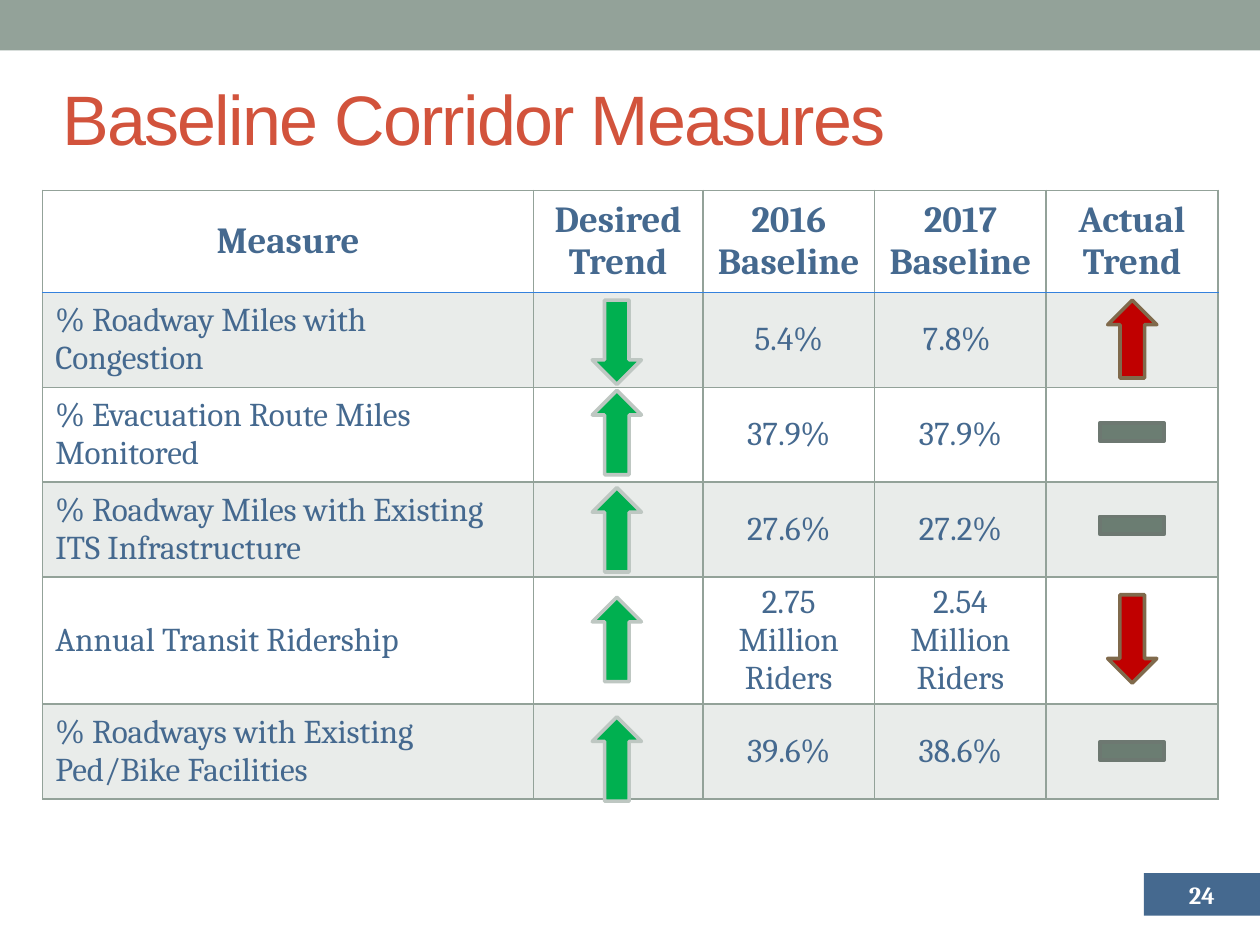
"""Build the slide of baseline corridor measures with trend arrows."""
from lxml.etree import SubElement
from pptx import Presentation
from pptx.dml.color import RGBColor
from pptx.enum.shapes import MSO_SHAPE as SHAPE
from pptx.enum.text import MSO_ANCHOR as ANCHOR, PP_ALIGN as ALIGN
from pptx.oxml import parse_xml
from pptx.oxml.ns import nsdecls, qn
from pptx.util import Cm, Pt

SAGE = RGBColor(0x93, 0xA2, 0x99)
NAVY = RGBColor(0x45, 0x69, 0x8F)
BLUE = RGBColor(0x34, 0x81, 0xDD)
BRICK = RGBColor(0xD2, 0x53, 0x3C)
WHITE = RGBColor(0xFF, 0xFF, 0xFF)
GREEN = RGBColor(0x00, 0xB0, 0x50)
GREEN_EDGE = RGBColor(0xBE, 0xC7, 0xC2)
RED = RGBColor(0xC0, 0x00, 0x00)
RED_EDGE = RGBColor(0x80, 0x6A, 0x4C)
DASH = RGBColor(0x6B, 0x7D, 0x72)
DASH_EDGE = RGBColor(0x6D, 0x78, 0x71)

ROWS = [
    ("Measure", "Desired Trend", "2016 Baseline", "2017\nBaseline", "Actual Trend"),
    ("% Roadway Miles with Congestion", "", "5.4%", "7.8% ", ""),
    ("% Evacuation Route Miles Monitored", "", "37.9%", "37.9%", ""),
    ("% Roadway Miles with Existing ITS Infrastructure", "", "27.6%", "27.2%", ""),
    ("Annual Transit Ridership", "", "2.75 Million Riders", "2.54 Million Riders", ""),
    ("% Roadways with Existing Ped/Bike Facilities", "", "39.6%", "38.6%", ""),
]
COL_WIDTHS = [9.89, 3.42, 3.46, 3.46, 3.46]
ROW_HEIGHTS = [2.06, 1.91, 1.91, 1.91, 2.55, 1.91]


class Deck:
    """Hold the style and the current slide."""

    font = "Cambria"

    def __init__(self, prs):
        self.s = prs.slides.add_slide(prs.slide_layouts[5])

    def style(self, p, size, color, bold=False, align=None, font=None):
        p.font.name, p.font.size, p.font.bold = font or self.font, Pt(size), bold
        p.font.color.rgb = color
        p.alignment = align

    def title(self, text, x, y, w, h):
        sp = self.s.shapes.title
        sp.left, sp.top, sp.width, sp.height = Cm(x), Cm(y), Cm(w), Cm(h)
        tf = sp.text_frame
        tf.text, tf.vertical_anchor, tf.word_wrap = text, ANCHOR.MIDDLE, True
        p = tf.paragraphs[0]
        self.style(p, 40, BRICK, align=ALIGN.LEFT, font="Arial")
        p.runs[0].font._element.set("spc", "-100")

    def shape(self, kind, x, y, w, h, fill, edge=None, rotation=0):
        sp = self.s.shapes.add_shape(kind, Cm(x), Cm(y), Cm(w), Cm(h))
        sp.shadow.inherit = False
        sp.rotation = rotation
        sp.fill.solid()
        sp.fill.fore_color.rgb = fill
        if edge is None:
            sp.line.fill.background()
        else:
            sp.line.color.rgb, sp.line.width = edge, Pt(2.08)

    def arrow(self, x, y, h, fill, edge, up):
        self.shape(SHAPE.DOWN_ARROW, x, y, 0.99, h, fill, edge, 180 if up else 0)

    def text(self, text, x, y, w, h):
        tf = self.s.shapes.add_textbox(Cm(x), Cm(y), Cm(w), Cm(h)).text_frame
        tf.text, tf.word_wrap, tf.vertical_anchor = text, True, ANCHOR.MIDDLE
        tf.margin_left = tf.margin_right = 0
        self.style(tf.paragraphs[0], 14, WHITE, True, ALIGN.CENTER)

    def borders(self, cell, colors):
        tcPr = cell._tc.get_or_add_tcPr()
        for i, (side, color) in enumerate(colors.items()):
            tcPr.insert(i, parse_xml(
                f'<a:ln{side} {nsdecls("a")} w="12700"><a:solidFill>'
                f'<a:srgbClr val="{color}"/></a:solidFill></a:ln{side}>'))

    def cell(self, cell, text, row, col):
        cell.text, cell.vertical_anchor = text, ANCHOR.MIDDLE
        header = row == 0
        for p in cell.text_frame.paragraphs:
            self.style(p, 21 if header else 19, NAVY, header,
                       ALIGN.CENTER if header or col else ALIGN.LEFT)
        if row % 2:
            cell.fill.solid()
            cell.fill.fore_color.rgb = SAGE
            color = cell._tc.tcPr.find(".//" + qn("a:srgbClr"))
            SubElement(color, qn("a:alpha")).set("val", "20000")
        else:
            cell.fill.background()
        self.borders(cell, {"L": SAGE, "R": SAGE, "T": BLUE if row == 1 else SAGE,
                            "B": BLUE if header else SAGE})

    def table(self, rows, x, y, widths, heights):
        tbl = self.s.shapes.add_table(len(rows), len(widths), Cm(x), Cm(y),
                                      Cm(sum(widths)), Cm(sum(heights))).table
        tbl.horz_banding = False
        for column, w in zip(tbl.columns, widths):
            column.width = Cm(w)
        for i, (row, h) in enumerate(zip(rows, heights)):
            tbl.rows[i].height = Cm(h)
            for j, text in enumerate(row):
                self.cell(tbl.cell(i, j), text, i, j)


def main():
    prs = Presentation()
    prs.slide_width, prs.slide_height = Cm(25.4), Cm(19.05)
    deck = Deck(prs)
    deck.shape(SHAPE.RECTANGLE, 0, 0, 25.4, 1.02, SAGE)
    deck.shape(SHAPE.RECTANGLE, 23.06, 17.6, 2.34, 0.86, NAVY)
    deck.title("Baseline Corridor Measures", 1, 1, 22.86, 2.74)
    deck.table(ROWS, 0.86, 3.84, COL_WIDTHS, ROW_HEIGHTS)
    for y, up in [(6.05, False), (7.87, True), (9.83, True), (12.04, True), (14.45, True)]:
        deck.arrow(11.94, y, 1.7, GREEN, GREEN_EDGE, up)
    for y, h, up in [(6.05, 1.57, True), (11.99, 1.78, False)]:
        deck.arrow(22.33, y, h, RED, RED_EDGE, up)
    for y in (8.53, 10.41, 14.96):
        deck.shape(SHAPE.RECTANGLE, 22.17, y, 1.3, 0.36, DASH, DASH_EDGE)
    deck.text("24", 23.67, 17.6, 1.12, 0.86)
    prs.save("out.pptx")


if __name__ == "__main__":
    main()
